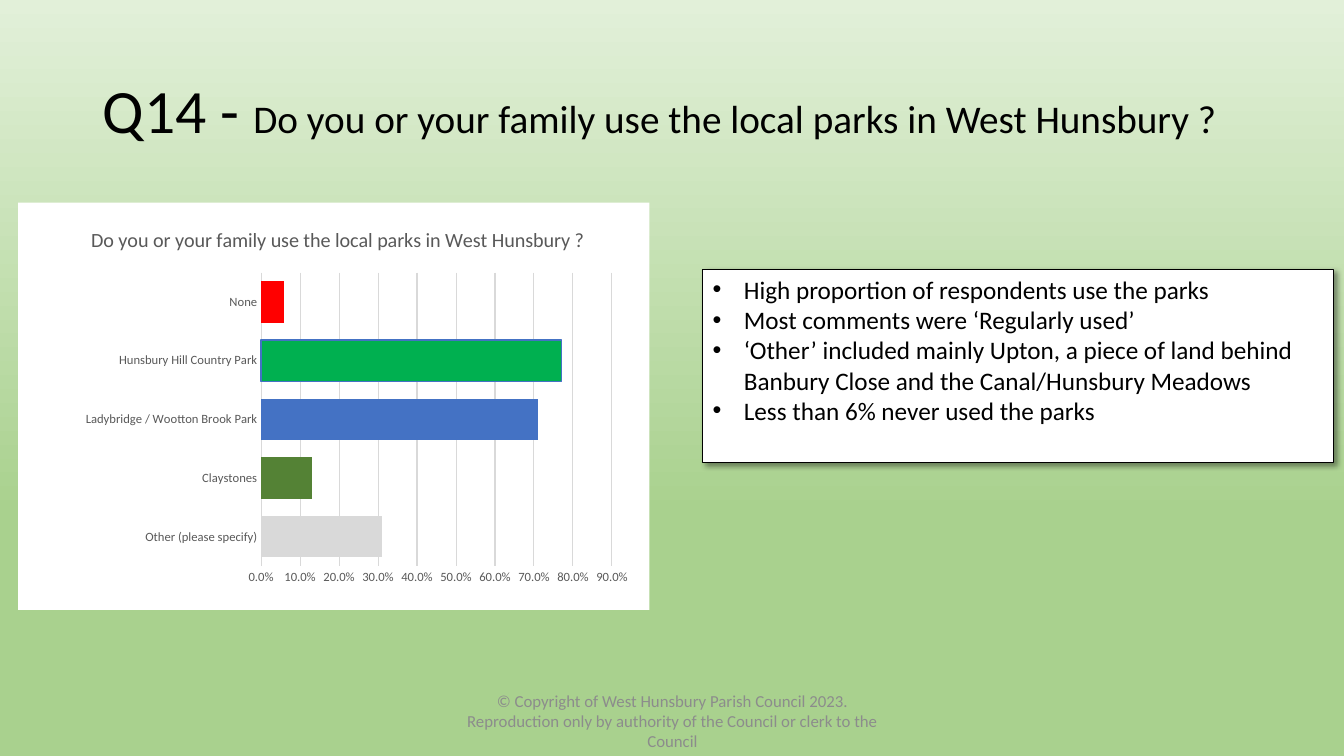
from copy import deepcopy

from pptx import Presentation
from pptx.chart.data import CategoryChartData
from pptx.dml.color import RGBColor
from pptx.enum.chart import XL_CHART_TYPE as ChartType, XL_TICK_MARK as Tick
from pptx.enum.shapes import MSO_SHAPE as Shape
from pptx.enum.text import MSO_ANCHOR as Anchor, PP_ALIGN as Align
from pptx.oxml import parse_xml
from pptx.oxml.ns import nsdecls, qn
from pptx.util import Pt

PX = 9144  # 100 px to the inch

QUESTION = "Do you or your family use the local parks in West Hunsbury ?"
PARK_USE = [
    ("Other (please specify)", 0.31, "D9D9D9"),
    ("Claystones", 0.13, "548235"),
    ("Ladybridge / Wootton Brook Park", 0.71, "4472C4"),
    ("Hunsbury Hill Country Park", 0.77, "00B050"),
    ("None", 0.06, "FF0000"),
]
FINDINGS = [
    "High proportion of respondents use the parks",
    "Most comments were ‘Regularly used’",
    "‘Other’ included mainly Upton, a piece of land behind "
    "Banbury Close and the Canal/Hunsbury Meadows",
    "Less than 6% never used the parks",
]
COPYRIGHT = (
    "© Copyright of West Hunsbury Parish Council 2023. "
    "Reproduction only by authority of the Council or clerk to the Council"
)


def rgb(color):
    return RGBColor.from_string(color)


def px(*lengths):
    return [length * PX for length in lengths]


def assign(target, **values):
    for name, value in values.items():
        setattr(target, name, value)


def set_line(line, color, width=0.75):
    line.color.rgb = rgb(color)
    line.width = Pt(width)


def set_layout(parent, index, **fractions):
    """Fix the place of a chart part, in fractions of the chart's size."""
    for old in parent.findall(qn("c:layout")):
        parent.remove(old)
    target = '<c:layoutTarget val="inner"/>' if "w" in fractions else ""
    modes = "".join(f'<c:{key}Mode val="edge"/>' for key in "xy")
    sizes = "".join(f'<c:{key} val="{value}"/>' for key, value in fractions.items())
    parent.insert(index, parse_xml(
        f'<c:layout {nsdecls("c")}><c:manualLayout>{target}{modes}{sizes}'
        "</c:manualLayout></c:layout>"))


class SurveySlide:
    font_name = "Calibri"
    ink = "000000"
    label_grey = "595959"
    rule_grey = "D9D9D9"
    paper = "FFFFFF"

    def __init__(self, deck):
        self.slide = deck.slides.add_slide(deck.slide_layouts[6])

    def set_font(self, font, size, color):
        assign(font, name=self.font_name, size=Pt(size), bold=False)
        font.color.rgb = rgb(color)

    def background(self, *stops):
        """Fill the slide from top to bottom with three (position, colour) stops."""
        fill = self.slide.background.fill
        fill.gradient()
        fill.gradient_angle = 270
        stop_list = self.slide.element.find(".//" + qn("a:gsLst"))
        stop_list.append(deepcopy(stop_list[-1]))
        for stop, (position, color) in zip(fill.gradient_stops, stops):
            stop.position = position
            stop.color.rgb = rgb(color)

    def text(self, box, runs, line_spacing=1.0, align=Align.LEFT):
        frame = self.slide.shapes.add_textbox(*px(*box)).text_frame
        assign(frame, word_wrap=True, vertical_anchor=Anchor.MIDDLE)
        paragraph = frame.paragraphs[0]
        assign(paragraph, line_spacing=line_spacing, alignment=align)
        for wording, size, color in runs:
            run = paragraph.add_run()
            run.text = wording
            self.set_font(run.font, size, color)

    def bullet_panel(self, box, items, size, indent):
        panel = self.slide.shapes.add_shape(Shape.RECTANGLE, *px(*box))
        panel.fill.solid()
        panel.fill.fore_color.rgb = rgb(self.paper)
        set_line(panel.line, self.ink)
        self.drop_shadow(panel)
        frame = panel.text_frame
        assign(frame, word_wrap=True, vertical_anchor=Anchor.TOP)
        for number, item in enumerate(items):
            paragraph = frame.add_paragraph() if number else frame.paragraphs[0]
            assign(paragraph, text=item, alignment=Align.LEFT)
            self.set_font(paragraph.runs[0].font, size, self.ink)
            properties = paragraph._p.get_or_add_pPr()
            properties.set("marL", str(indent * PX))
            properties.set("indent", str(-indent * PX))
            for bullet in ('buFont {} typeface="Arial"', 'buChar {} char="•"'):
                properties.append(parse_xml(f"<a:{bullet.format(nsdecls('a'))}/>"))

    def drop_shadow(self, shape):
        shape.shadow.inherit = False
        shape.element.spPr.find(qn("a:effectLst")).append(parse_xml(
            f'<a:outerShdw {nsdecls("a")} blurRad="{Pt(4)}" dist="{Pt(3)}" '
            'dir="2700000" algn="tl" rotWithShape="0">'
            f'<a:srgbClr val="{self.ink}"><a:alpha val="40000"/></a:srgbClr>'
            "</a:outerShdw>"))

    def bar_chart(self, box, title, rows):
        names, shares, colors = zip(*rows)
        data = CategoryChartData(number_format="0.0%")
        data.categories = names
        data.add_series("Series 1", shares)
        chart = self.slide.shapes.add_chart(
            ChartType.BAR_CLUSTERED, *px(*box), data).chart
        assign(chart, has_legend=False, has_title=True)
        self.set_font(chart.font, 10, self.ink)
        chart.element.find(qn("c:chart")).addnext(parse_xml(
            f'<c:spPr {nsdecls("c", "a")}><a:solidFill><a:srgbClr val="{self.paper}"/>'
            "</a:solidFill><a:ln><a:noFill/></a:ln></c:spPr>"))

        heading = chart.chart_title.text_frame
        heading.text = title
        self.set_font(heading.paragraphs[0].runs[0].font, 14.4, self.label_grey)
        set_layout(chart.element.find(".//" + qn("c:title")), 1, x=0.11, y=0.05)
        set_layout(chart.element.find(".//" + qn("c:plotArea")), 0,
                   x=0.385, y=0.172, w=0.556, h=0.721)
        self.axes(chart)

        plot = chart.plots[0]
        assign(plot, gap_width=42, overlap=2, vary_by_categories=False)
        bars = plot.series[0]
        bars.invert_if_negative = False
        for number, color in enumerate(colors):
            fill = bars.points[number].format.fill
            fill.solid()
            fill.fore_color.rgb = rgb(color)
        most_used = shares.index(max(shares))
        set_line(bars.points[most_used].format.line, "4472C4", 1)

    def axes(self, chart):
        parks, share = chart.category_axis, chart.value_axis
        for axis in (parks, share):
            assign(axis, major_tick_mark=Tick.NONE, minor_tick_mark=Tick.NONE)
            self.set_font(axis.tick_labels.font, 9, self.label_grey)
        set_line(parks.format.line, self.rule_grey)
        assign(share, minimum_scale=0, maximum_scale=0.9, major_unit=0.1,
               has_major_gridlines=True)
        assign(share.tick_labels, number_format="0.0%", number_format_is_linked=False)
        share.format.line.fill.background()
        set_line(share.major_gridlines.format.line, self.rule_grey)


def main():
    deck = Presentation()
    assign(deck, slide_width=1333 * PX, slide_height=750 * PX)
    survey = SurveySlide(deck)
    survey.background((0, "E2F0D9"), (0.68, "A9D18E"), (1, "A9D18E"))
    survey.text((92, 40, 1150, 145),
                [("Q14 - ", 44, survey.ink), (QUESTION, 28, survey.ink)],
                line_spacing=0.9)
    survey.bar_chart((18, 201, 626, 404), QUESTION, PARK_USE)
    survey.bullet_panel((697, 267, 626, 192), FINDINGS, size=18, indent=31)
    survey.text((442, 695, 450, 40), [(COPYRIGHT, 12, "8C8C8C")], align=Align.CENTER)
    deck.save("out.pptx")


if __name__ == "__main__":
    main()
